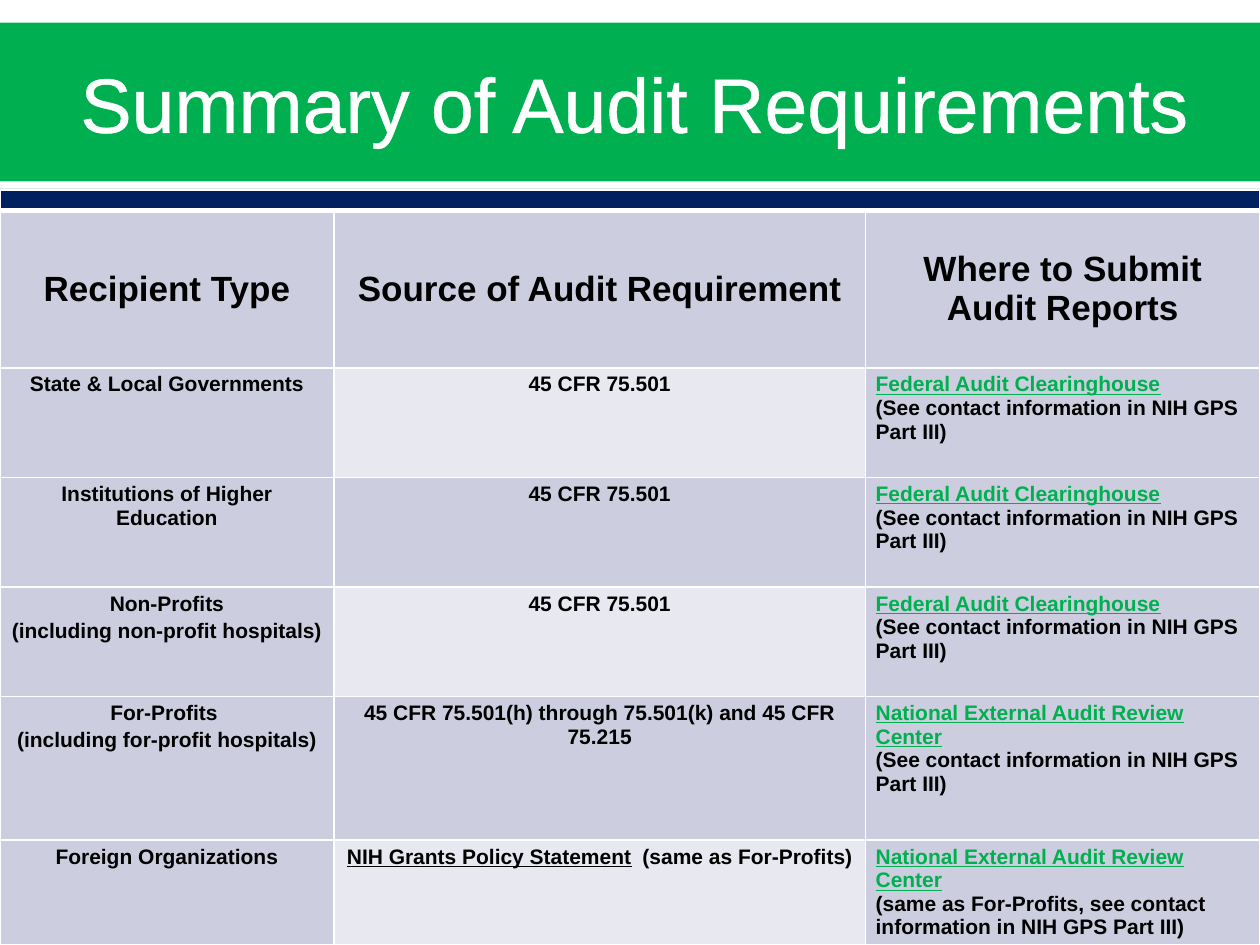
"""Build the slide that sums up audit requirements by recipient type."""
from lxml.etree import SubElement as Sub
from pptx import Presentation
from pptx.dml.color import RGBColor as Rgb
from pptx.enum.shapes import MSO_SHAPE as Kind
from pptx.enum.text import MSO_ANCHOR as Anchor, PP_ALIGN as Align
from pptx.oxml.ns import qn
from pptx.util import Pt


def paint(fill, color):
    fill.solid()
    fill.fore_color.rgb = Rgb.from_string(color)


def outline(props, tag, width):
    line = Sub(props, qn(tag), w=str(Pt(width)))
    Sub(Sub(line, qn("a:solidFill")), qn("a:srgbClr"), val="FFFFFF")


deck = Presentation()
deck.slide_width, deck.slide_height = Pt(720), Pt(540)
slide = deck.slides.add_slide(deck.slide_layouts[6])

for top, height, color in [(13, 90.7, "00B050"), (108, 11.5, "002876")]:
    band = slide.shapes.add_shape(Kind.RECTANGLE, 0, Pt(top), Pt(720), Pt(height))
    band.shadow.inherit = False
    band.line.fill.background()
    paint(band.fill, color)

CFR = "45 CFR 75.501"
HOUSE = "Federal Audit Clearinghouse"
CENTER = "National External Audit Review Center"
POLICY = "NIH Grants Policy Statement"
CONTACT = "(See contact information in NIH GPS Part III)"
FOREIGN = "(same as For-Profits, see contact information in NIH GPS Part III)"

# Cells hold paragraphs, and paragraphs hold runs.
rows = [
    [[], [], []],
    [[["Recipient Type"]], [["Source of Audit Requirement"]],
     [["Where to Submit Audit Reports"]]],
    [[["State & Local Governments"]], [[CFR]], [[HOUSE, "\n", CONTACT]]],
    [[["Institutions of Higher Education"]], [[CFR]], [[HOUSE, "\n", CONTACT]]],
    [[["Non-Profits"], ["(including non-profit hospitals)"]], [[CFR]],
     [[HOUSE, "\n", CONTACT]]],
    [[["For-Profits "], ["(including for-profit hospitals)"]],
     [["45 CFR 75.501(h) through 75.501(k) and 45 CFR 75.215"]],
     [[CENTER, "\n", CONTACT]]],
    [[["Foreign Organizations"]], [[POLICY, " ", " (same as For-Profits)"]],
     [[CENTER], [FOREIGN]]],
]
widths = [190.8, 303.8, 225.4]
heights = [11.5, 90, 62.6, 62.6, 62.6, 82.1, 50.4]

frame = slide.shapes.add_table(7, 3, 0, Pt(108.7), Pt(sum(widths)), Pt(sum(heights)))
table = frame.table
table.first_row = table.horz_banding = False
for col, width in zip(table.columns, widths):
    col.width = Pt(width)
for row, height in zip(table.rows, heights):
    row.height = Pt(height)

for r, row in enumerate(rows):
    for c, paras in enumerate(row):
        cell = table.cell(r, c)
        cell.margin_left = cell.margin_right = Pt(5.8 if r else 0)
        cell.margin_top = cell.margin_bottom = Pt(2.9 if r else 0)
        cell.vertical_anchor = Anchor.MIDDLE if r == 1 else Anchor.TOP
        props = cell._tc.get_or_add_tcPr()
        for side in "LRTB":
            thick = (r, side) in [(0, "B"), (1, "T")]
            outline(props, "a:ln" + side, 3 if thick else 1)
        light = c == 1 and r > 1 and r % 2 == 0
        paint(cell.fill, "002060" if r == 0 else "E7E8F0" if light else "CCCEDF")
        body = cell.text_frame
        if not paras:
            Sub(body.paragraphs[0]._p, qn("a:endParaRPr"), sz="100")
        for i, runs in enumerate(paras):
            para = body.add_paragraph() if i else body.paragraphs[0]
            para.alignment = Align.LEFT if r > 1 and c == 2 else Align.CENTER
            para.space_before = Pt(4 if r == 1 else 0 if r == 6 and c else 2)
            para.space_after = Pt(4 if r == 1 else 0)
            for text in runs:
                if text == "\n":
                    para.add_line_break()
                    Sub(para._p[-1], qn("a:rPr"), sz="1200", b="1")
                    continue
                run = para.add_run()
                run.text = text
                font = run.font
                font.name, font.bold = "Arial", True
                font.size = Pt(20 if r == 1 else 10.5 if text == " " else 12)
                font.underline = text in (HOUSE, CENTER, POLICY)
                paint(font.fill, "00B050" if text in (HOUSE, CENTER) else "000000")
table.cell(0, 0).merge(table.cell(0, 2))

title = slide.shapes.add_textbox(Pt(18), Pt(14.4), Pt(689.8), Pt(87.8)).text_frame
title.word_wrap = True
title.vertical_anchor = Anchor.MIDDLE
title.text = "Summary of Audit Requirements"
para = title.paragraphs[0]
para.alignment = Align.CENTER
font = para.runs[0].font
outline(para.runs[0]._r.get_or_add_rPr(), "a:ln", 1.1)
font.name, font.size = "Arial", Pt(44)
paint(font.fill, "FFFFFF")

deck.save("out.pptx")
